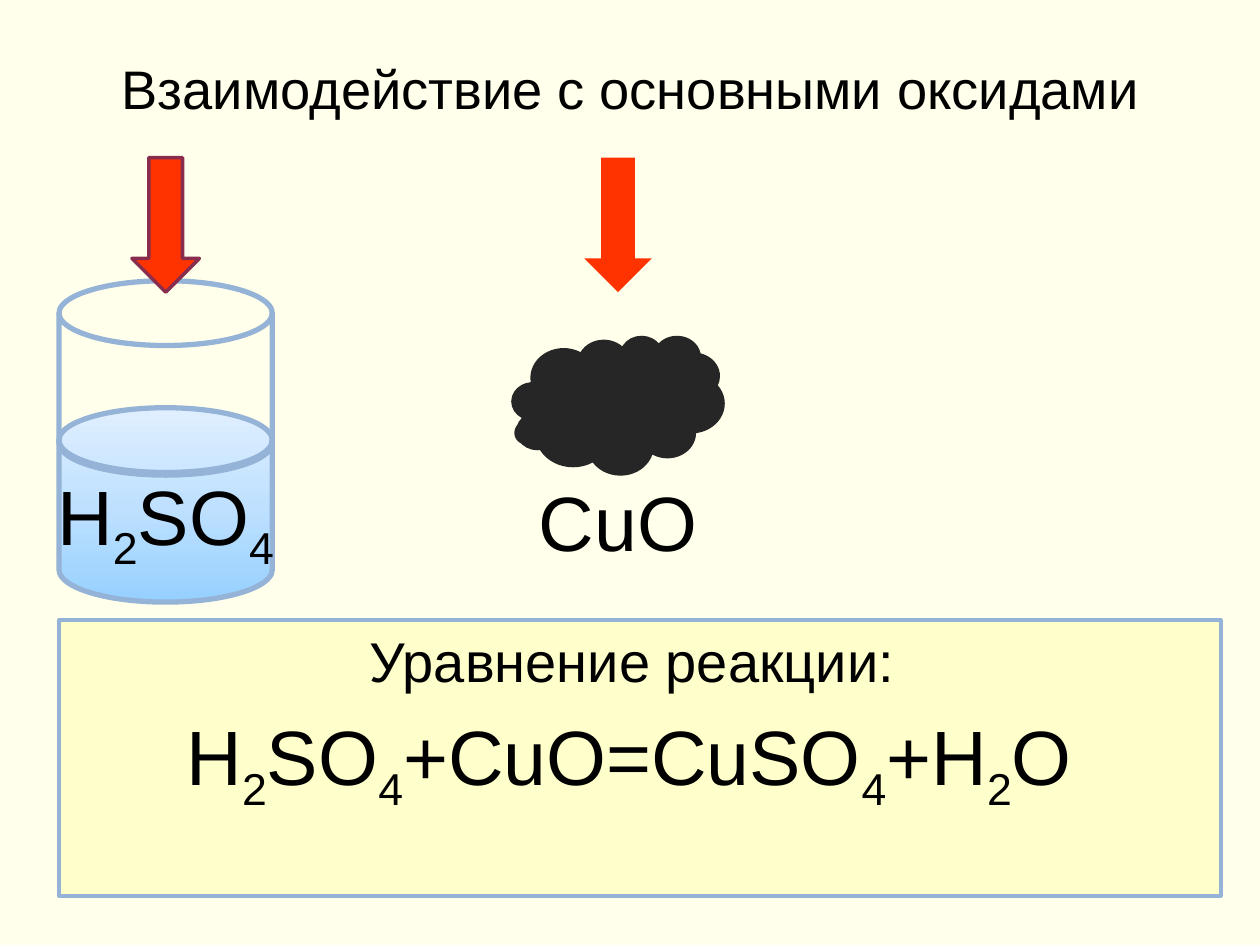
from copy import deepcopy
from itertools import groupby

from pptx import Presentation
from pptx.dml.color import RGBColor
from pptx.enum.shapes import MSO_SHAPE as Shape
from pptx.enum.text import MSO_ANCHOR as Anchor, PP_ALIGN as Align
from pptx.util import Cm, Pt

BLACK = RGBColor(0x00, 0x00, 0x00)
CREAM = RGBColor(0xFF, 0xFF, 0xEB)
YELLOW = RGBColor(0xFF, 0xFF, 0xCC)
RED = RGBColor(0xFF, 0x33, 0x00)
WINE = RGBColor(0x88, 0x2D, 0x4D)
COAL = RGBColor(0x26, 0x26, 0x26)
BLUE = RGBColor(0x95, 0xB3, 0xD7)
LIQUID = [RGBColor(0x96, 0xD0, 0xFF), RGBColor(0xBF, 0xE1, 0xFF), RGBColor(0xE0, 0xEF, 0xFF)]


def write(paragraph, text, size=44, before=0):
    """Write centred text; digits in formulas become subscripts."""
    paragraph.alignment = Align.CENTER
    paragraph.space_before = Pt(before)
    for is_digit, characters in groupby(text, str.isdigit):
        run = paragraph.add_run()
        run.text = "".join(characters)
        run.font.name = "Arial"
        run.font.size = Pt(size)
        run.font.color.rgb = BLACK
        if is_digit:
            run._r.get_or_add_rPr().set("baseline", "-25000")


def add_shape(shapes, kind, left, top, width, height, fill=None, line=None, weight=3):
    shape = shapes.add_shape(kind, Cm(left), Cm(top), Cm(width), Cm(height))
    shape.shadow.inherit = False
    if fill is None:
        shape.fill.background()
    else:
        shape.fill.solid()
        shape.fill.fore_color.rgb = fill
    if line is None:
        shape.line.fill.background()
    else:
        shape.line.color.rgb = line
        shape.line.width = Pt(weight)
    return shape


presentation = Presentation()
presentation.slide_width, presentation.slide_height = Cm(25.4), Cm(19.05)
slide = presentation.slides.add_slide(presentation.slide_layouts[6])
slide.background.fill.solid()
slide.background.fill.fore_color.rgb = CREAM

# Title
title = slide.shapes.add_textbox(Cm(1.27), Cm(0.58), Cm(22.86), Cm(2.39)).text_frame
title.word_wrap = True
title.vertical_anchor = Anchor.MIDDLE
write(title.paragraphs[0], "Взаимодействие c основными оксидами", size=31)

# Shared geometry of the two reagents
ACID_LEFT, OXIDE_LEFT = 1.19, 10.31
WIDTH, HEIGHT = 4.3, 3.92
LABEL_TOP = 8.22
ARROW_INSET, ARROW_TOP, ARROW_WIDTH, ARROW_HEIGHT = 1.47, 3.18, 1.36, 2.71

# Beaker of acid: liquid, glass and arrow
acid = slide.shapes.add_group_shape().shapes
liquid = add_shape(acid, Shape.FLOWCHART_MAGNETIC_DISK, ACID_LEFT, LABEL_TOP, WIDTH, HEIGHT, line=BLUE)
liquid.fill.gradient()
liquid.fill.gradient_angle = 90
stop_list = liquid._element.spPr.find(".//{*}gsLst")
stop_list.insert(1, deepcopy(stop_list[0]))
for index, (stop, color) in enumerate(zip(liquid.fill.gradient_stops, LIQUID)):
    stop.position = index / 2
    stop.color.rgb = color
add_shape(acid, Shape.FLOWCHART_MAGNETIC_DISK, ACID_LEFT, 5.66, WIDTH, HEIGHT, line=BLUE)
add_shape(acid, Shape.DOWN_ARROW, ACID_LEFT + ARROW_INSET, ARROW_TOP, ARROW_WIDTH, ARROW_HEIGHT,
          fill=RED, line=WINE, weight=2)

# Reaction equation
equation = add_shape(slide.shapes, Shape.RECTANGLE, ACID_LEFT, 12.5, 23.42, 5.56,
                     fill=YELLOW, line=BLUE, weight=2.25).text_frame
equation.word_wrap = True
equation.vertical_anchor = Anchor.TOP
write(equation.paragraphs[0], "Уравнение реакции: ", size=32, before=6.4)
write(equation.add_paragraph(), "H2SO4+CuO=CuSO4+H2O ", before=8.8)

# Oxide powder: label, heap and arrow
oxide = slide.shapes.add_group_shape().shapes
powder = add_shape(oxide, Shape.FLOWCHART_MAGNETIC_DISK, OXIDE_LEFT, LABEL_TOP, WIDTH, HEIGHT)
heap = add_shape(oxide, Shape.CLOUD_CALLOUT, OXIDE_LEFT, 6.76, WIDTH, 2.82, fill=COAL)
heap.adjustments[0], heap.adjustments[1] = -0.35, 0.16
add_shape(oxide, Shape.DOWN_ARROW, OXIDE_LEFT + ARROW_INSET, ARROW_TOP, ARROW_WIDTH, ARROW_HEIGHT,
          fill=RED)

# Reagent labels
for shape, formula in ((liquid, "H2SO4"), (powder, "CuO")):
    shape.text_frame.word_wrap = False
    shape.text_frame.vertical_anchor = Anchor.MIDDLE
    write(shape.text_frame.paragraphs[0], formula)

presentation.save("out.pptx")
